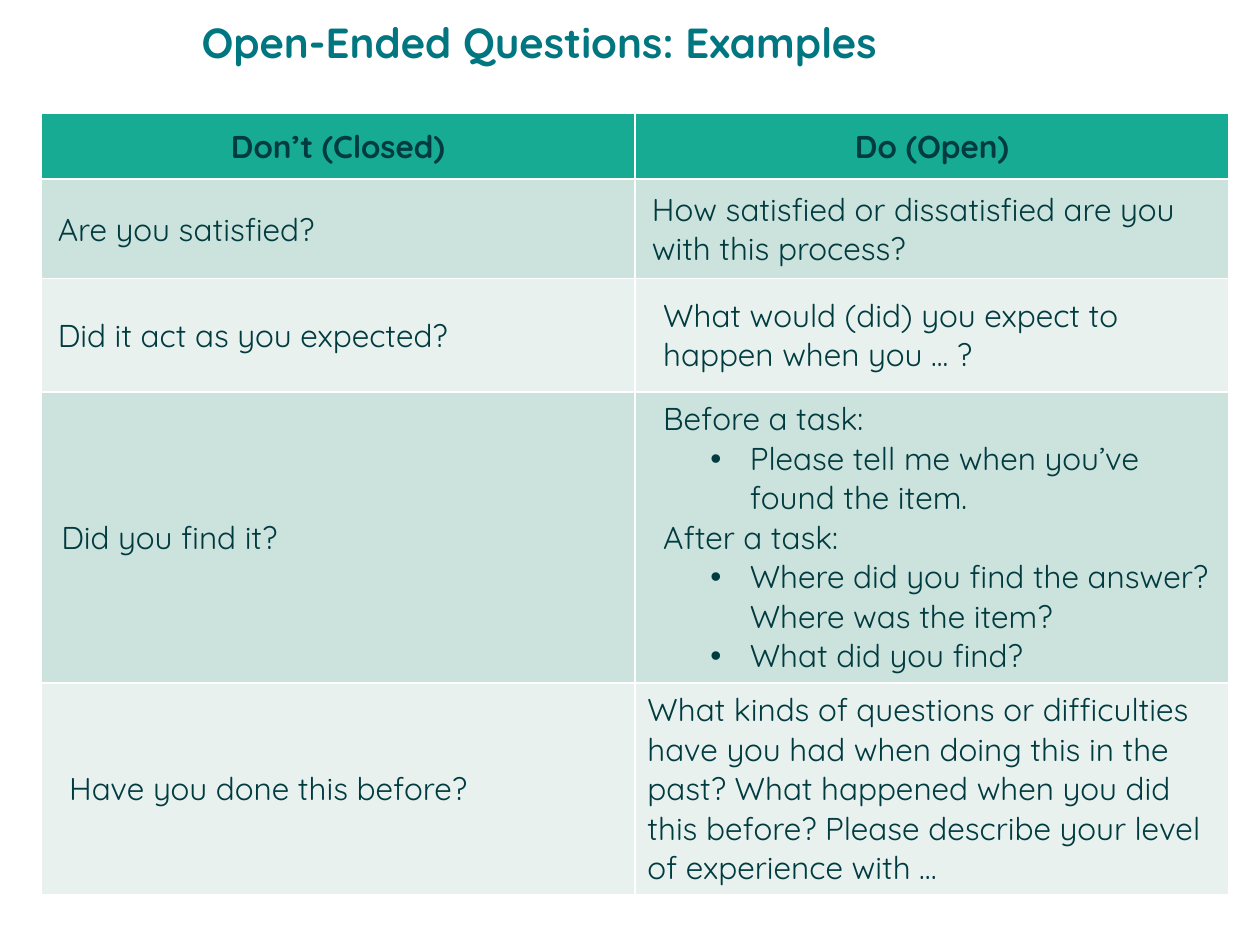
"""Build a slide that contrasts closed and open-ended questions in a table."""

from lxml.etree import SubElement
from pptx import Presentation
from pptx.dml.color import RGBColor
from pptx.enum.text import MSO_ANCHOR, MSO_AUTO_SIZE, PP_ALIGN
from pptx.oxml.ns import qn
from pptx.util import Pt

COLORS = {
    "title": "007680",
    "text": "003B40",
    "header": "16AB92",
    "dark_band": "CCE2DC",
    "light_band": "E8F1EE",
}
FONT = "Quicksand"
TIGHT, ROOMY = (0.72, 0.72, 0.72, 0), (7.2, 3.6, 7.2, 3.6)
SPACE = 4.5
COLUMN_WIDTH = 339.5
ROW_HEIGHTS = [37.5, 56.9, 64.8, 166.3, 121]

HEADERS = ["Don’t (Closed)", "Do (Open)"]
QUESTIONS = [
    [
        (TIGHT, 2 * SPACE, ["Are you satisfied?"]),
        (TIGHT, 2 * SPACE, ["How satisfied or dissatisfied are you", "with this process?"]),
    ],
    [
        (TIGHT, 2 * SPACE, ["Did it act as you expected?"]),
        (ROOMY, 2 * SPACE, ["What would (did) you expect to", "happen when you ... ?"]),
    ],
    [
        (ROOMY, SPACE, ["Did you find it?"]),
        (ROOMY, 2 * SPACE, [
            "Before a task:",
            ("•", "Please tell me when you’ve found the item."),
            "After a task:",
            ("•", "Where did you find the answer? Where was the item?"),
            ("•", "What did you find?"),
        ]),
    ],
    [
        (ROOMY, 2 * SPACE, ["Have you done this before?"]),
        (ROOMY, 0, [
            "What kinds of questions or difficulties have you had when doing this "
            "in the past? What happened when you did this before? Please describe "
            "your level of experience with …"
        ]),
    ],
]


class SlideBuilder:
    """Hold the style and the current slide."""

    def __init__(self, presentation):
        self.slide = presentation.slides.add_slide(presentation.slide_layouts[5])

    def format_font(self, font, color, size, bold=False):
        """Apply the slide's typeface to a font."""
        for name, value in {"name": FONT, "size": Pt(size), "bold": bold}.items():
            setattr(font, name, value)
        font.color.rgb = RGBColor.from_string(COLORS[color])

    def add_title(self, text, left, top, width, height):
        """Move, fill and format the title placeholder."""
        title = self.slide.shapes.title
        position = {"left": left, "top": top, "width": width, "height": height}
        for name, value in position.items():
            setattr(title, name, Pt(value))
        frame = title.text_frame
        frame.text = text
        frame.auto_size = MSO_AUTO_SIZE.NONE
        frame.vertical_anchor = MSO_ANCHOR.TOP
        frame.paragraphs[0].alignment = PP_ALIGN.LEFT
        self.format_font(frame.paragraphs[0].runs[0].font, "title", 24, True)

    def add_table(self, left, top, row_heights, column_widths):
        """Add an empty table with the given rows and columns."""
        frame = self.slide.shapes.add_table(
            len(row_heights), len(column_widths), Pt(left), Pt(top),
            Pt(sum(column_widths)), Pt(sum(row_heights)))
        for row, height in zip(frame.table.rows, row_heights):
            row.height = Pt(height)
        for column, width in zip(frame.table.columns, column_widths):
            column.width = Pt(width)
        return frame.table

    def fill_cell(self, cell, lines, fill, margins, indent=0, header=False):
        """Write plain and bulleted lines into a filled cell."""
        cell.fill.solid()
        cell.fill.fore_color.rgb = RGBColor.from_string(COLORS[fill])
        cell.vertical_anchor = MSO_ANCHOR.MIDDLE
        for side, margin in zip(("left", "top", "right", "bottom"), margins):
            setattr(cell, f"margin_{side}", Pt(margin))
        frame = cell.text_frame
        for index, line in enumerate(lines):
            paragraph = frame.paragraphs[0] if index == 0 else frame.add_paragraph()
            paragraph.alignment = PP_ALIGN.CENTER if header else PP_ALIGN.LEFT
            if isinstance(line, tuple):
                bullet, line = line
                self.add_bullet(paragraph, bullet)
            else:
                paragraph._p.get_or_add_pPr().set("marL", str(Pt(indent)))
            run = paragraph.add_run()
            run.text = line
            self.format_font(run.font, "text", 18, header)

    def add_bullet(self, paragraph, character):
        """Give a paragraph a hanging bullet."""
        paragraph.level = 1
        properties = paragraph._p.get_or_add_pPr()
        properties.set("marL", str(Pt(58.5)))
        properties.set("indent", str(-Pt(22.5)))
        SubElement(properties, qn("a:buFont")).set("typeface", "Arial")
        SubElement(properties, qn("a:buChar")).set("char", character)


def main():
    """Create and save the presentation."""
    presentation = Presentation()
    presentation.slide_width, presentation.slide_height = Pt(720), Pt(540)
    builder = SlideBuilder(presentation)
    builder.add_title("Open-Ended Questions: Examples", 108, 5.8, 533.5, 40)

    table = builder.add_table(23.3, 64.8, ROW_HEIGHTS, [COLUMN_WIDTH] * 2)
    for column, header in enumerate(HEADERS):
        builder.fill_cell(table.cell(0, column), [header], "header", TIGHT, header=True)
    for row, answers in enumerate(QUESTIONS, start=1):
        band = "dark_band" if row % 2 else "light_band"
        for column, (margins, indent, lines) in enumerate(answers):
            builder.fill_cell(table.cell(row, column), lines, band, margins, indent)

    presentation.save("out.pptx")


if __name__ == "__main__":
    main()
